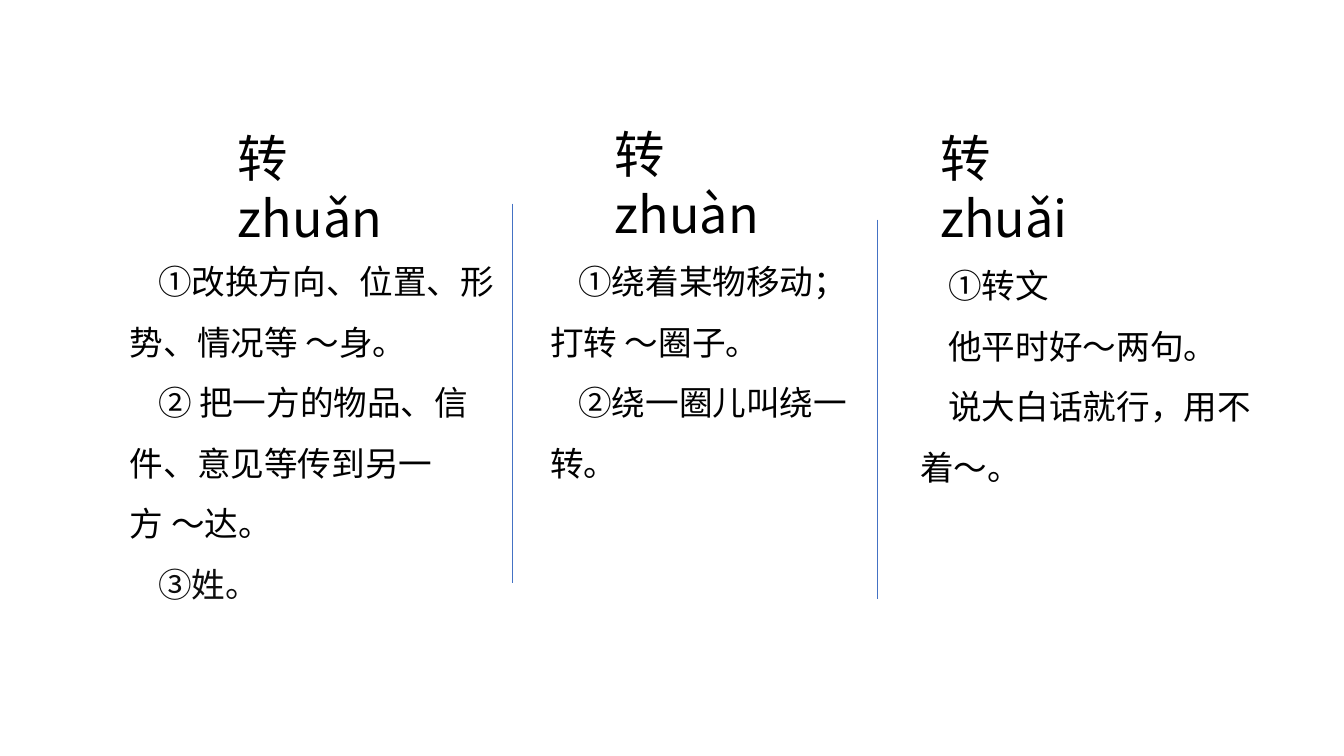
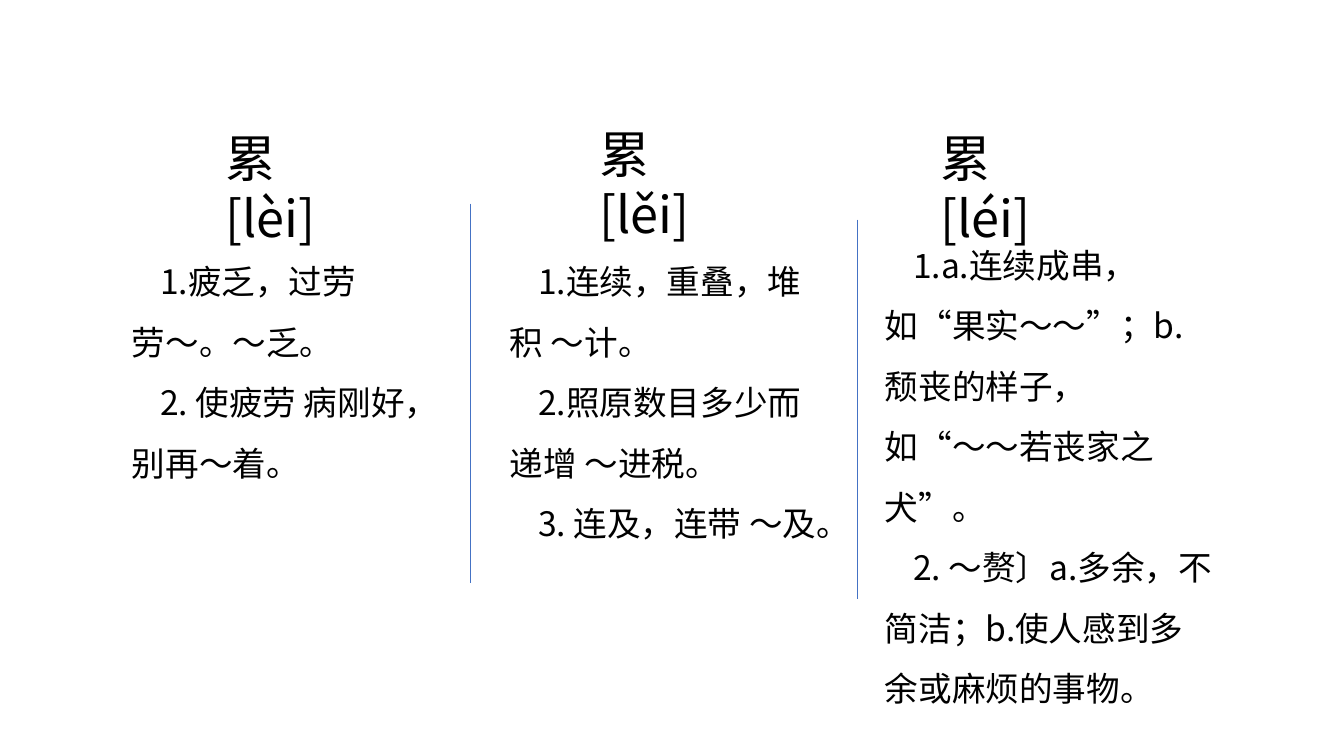
from dataclasses import dataclass

from lxml import etree
from pptx import Presentation
from pptx.dml.color import RGBColor
from pptx.enum.shapes import MSO_CONNECTOR
from pptx.enum.text import MSO_ANCHOR
from pptx.oxml.ns import qn
from pptx.util import Inches, Pt

STRAIGHT = MSO_CONNECTOR.STRAIGHT
TOP = MSO_ANCHOR.TOP


@dataclass(frozen=True)
class Theme:
    font: str = "Noto Sans CJK SC"
    ink: RGBColor = RGBColor(0x00, 0x00, 0x00)
    soft_ink: RGBColor = RGBColor(0x0D, 0x0D, 0x0D)
    rule: RGBColor = RGBColor(0x44, 0x72, 0xC4)
    heading_size: int = 36
    body_size: int = 24
    rule_width: float = 0.5
    body_spacing: float = 1.5
    first_indent: float = 0.28


THEME = Theme()
SLIDE_WIDTH = Inches(13.333)
SLIDE_HEIGHT = Inches(7.5)

# Lengths below are percentages of the slide's width or height.
HEADING_TOPS = (16.13, 15.6, 16.13)
HEADING_HEIGHT = 9.47
DIVIDER_TOPS = (26.93, 29.07)
DIVIDER_HEIGHT = 50.13


@dataclass(frozen=True)
class Reading:
    """One pronunciation: its body box, its heading inside it, and its senses."""
    heading: str
    senses: tuple
    box: tuple
    heading_offset: float
    heading_width: float
    last_color: RGBColor = THEME.ink


ZHUAN = (
    Reading("转zhuǎn",
            ("①改换方向、位置、形势、情况等 ～身。",
             "② 把一方的物品、信件、意见等传到另一方 ～达。",
             "③姓。"),
            (8.93, 31.2, 29.03, 51.5), 8.03, 15.08, THEME.soft_ink),
    Reading("转zhuàn",
            ("①绕着某物移动；打转 ～圈子。",
             "②绕一圈儿叫绕一转。"),
            (40.2, 31.2, 24.45, 37.7), 4.8, 15.08),
    Reading("转zhuǎi",
            ("①转文",
             "他平时好～两句。",
             "说大白话就行，用不着～。"),
            (67.73, 31.73, 28.58, 37.7), 1.5, 13.8),
)

LEI = (
    Reading("累[lèi]",
            ("1.疲乏，过劳 劳～。～乏。",
             "2. 使疲劳 病刚好，别再～着。"),
            (9.08, 31.2, 24.9, 51.5), 6.97, 11.03),
    Reading("累[lěi]",
            ("1.连续，重叠，堆积 ～计。",
             "2.照原数目多少而递增 ～进税。",
             "3. 连及，连带 ～及。"),
            (37.2, 31.2, 24.45, 37.7), 6.68, 11.03),
    Reading("累[léi]",
            ("1.a.连续成串，如“果实～～”；b.颓丧的样子，如“～～若丧家之犬”。",
             "2. ～赘〕a.多余，不简洁；b.使人感到多余或麻烦的事物。"),
            (65.1, 29.07, 26.1, 57.9), 4.13, 11.03),
)

# Each slide: its readings and the horizontal places of its dividers.
SLIDES = ((ZHUAN, (38.1, 65.25)), (LEI, (35.03, 63.83)))


def across(percent):
    return round(SLIDE_WIDTH * percent / 100)


def down(percent):
    return round(SLIDE_HEIGHT * percent / 100)


def style_paragraph(paragraph, size, color):
    paragraph.font.name = THEME.font
    paragraph.font.size = Pt(size)
    paragraph.font.color.rgb = color
    defaults = paragraph._p.get_or_add_pPr().find(qn("a:defRPr"))
    east_asian = etree.Element(qn("a:ea"), typeface=THEME.font)
    defaults.find(qn("a:latin")).addnext(east_asian)


def add_text_frame(slide, box):
    left, top, width, height = box
    shape = slide.shapes.add_textbox(across(left), down(top),
                                     across(width), down(height))
    frame = shape.text_frame
    frame.word_wrap = True
    frame.vertical_anchor = TOP
    return frame


def add_heading(slide, text, box):
    paragraph = add_text_frame(slide, box).paragraphs[0]
    paragraph.text = text
    style_paragraph(paragraph, THEME.heading_size, THEME.ink)


def add_senses(slide, reading):
    frame = add_text_frame(slide, reading.box)
    last = len(reading.senses) - 1
    for index, sense in enumerate(reading.senses):
        paragraph = frame.add_paragraph() if index else frame.paragraphs[0]
        paragraph.text = sense
        paragraph.line_spacing = THEME.body_spacing
        properties = paragraph._p.get_or_add_pPr()
        properties.set("marL", "0")
        properties.set("indent", str(Inches(THEME.first_indent)))
        color = reading.last_color if index == last else THEME.ink
        style_paragraph(paragraph, THEME.body_size, color)


def add_reading(slide, reading, heading_top):
    add_senses(slide, reading)
    heading_left = reading.box[0] + reading.heading_offset
    add_heading(slide, reading.heading,
                (heading_left, heading_top, reading.heading_width, HEADING_HEIGHT))


def add_divider(slide, left, top):
    divider = slide.shapes.add_connector(
        STRAIGHT, across(left), down(top), across(left), down(top + DIVIDER_HEIGHT))
    divider.line.color.rgb = THEME.rule
    divider.line.width = Pt(THEME.rule_width)
    etree.SubElement(divider._element.spPr, qn("a:effectLst"))


def add_readings_slide(presentation, readings, divider_lefts):
    slide = presentation.slides.add_slide(presentation.slide_layouts[6])
    for reading, heading_top in zip(readings, HEADING_TOPS):
        add_reading(slide, reading, heading_top)
    for left, top in zip(divider_lefts, DIVIDER_TOPS):
        add_divider(slide, left, top)


def main():
    presentation = Presentation()
    presentation.slide_width = SLIDE_WIDTH
    presentation.slide_height = SLIDE_HEIGHT
    for readings, divider_lefts in SLIDES:
        add_readings_slide(presentation, readings, divider_lefts)
    presentation.save("out.pptx")


if __name__ == "__main__":
    main()
